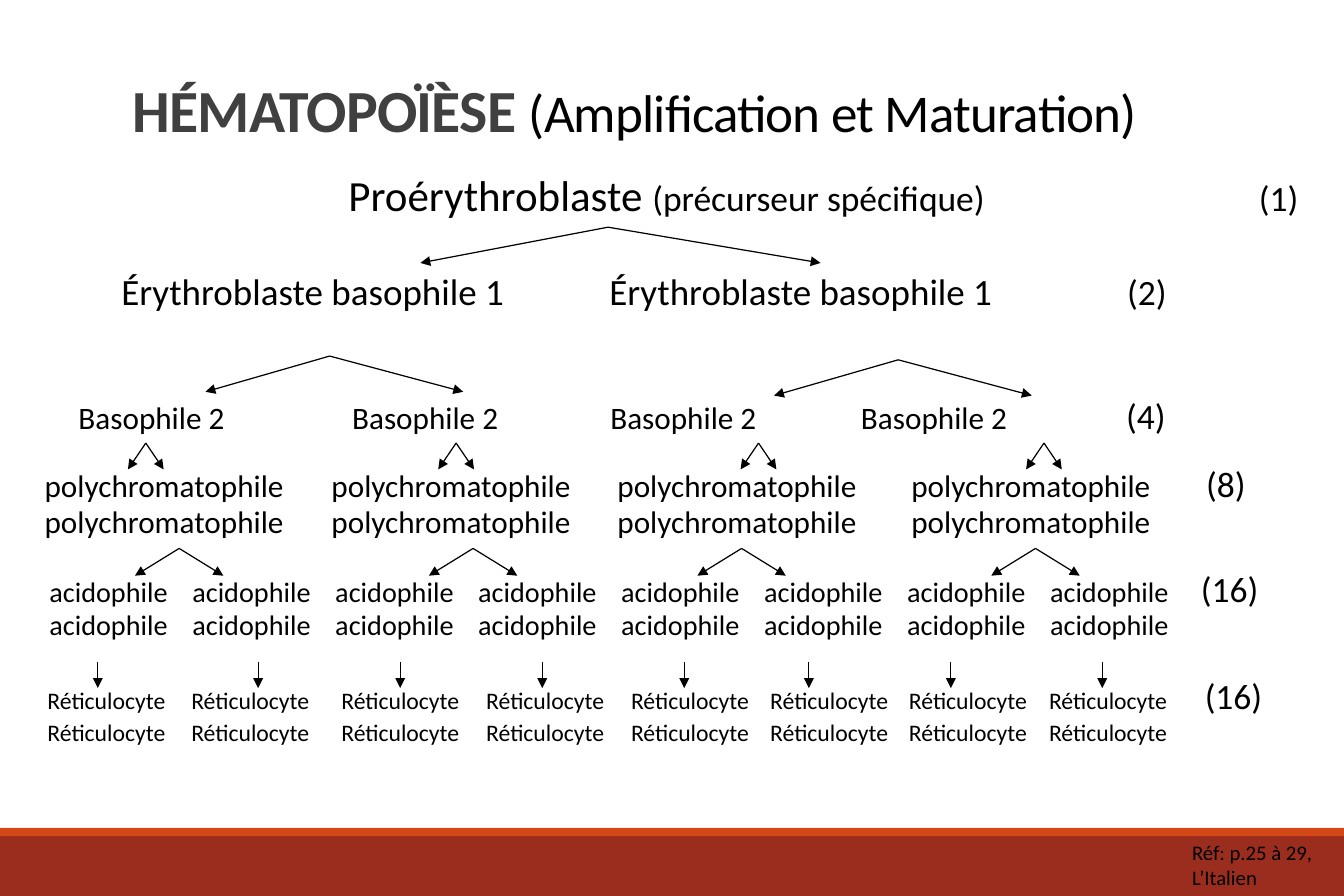
from lxml.etree import SubElement
from pptx import Presentation
from pptx.dml.color import RGBColor
from pptx.enum.shapes import MSO_CONNECTOR, MSO_SHAPE
from pptx.enum.text import MSO_ANCHOR
from pptx.oxml.ns import qn
from pptx.util import Cm, Pt

BLACK = RGBColor(0x00, 0x00, 0x00)
GREY = RGBColor(0x40, 0x40, 0x40)
BRICK = RGBColor(0x9B, 0x2D, 0x1F)
ORANGE = RGBColor(0xD3, 0x48, 0x17)
WIDTH, HEIGHT = 28.58, 19.05
LINEAGE_LEFT = 0.56
TEXT_LEFT = LINEAGE_LEFT + 0.28

POLY_STOPS = [0.98, 7.08, 13.16, 19.41, 25.68]
ACIDO_STOPS = [1.08 + 3.04 * i for i in range(8)] + [25.57]
RETI_STOPS = [1.04, 4.1, 7.29, 10.37, 13.45, 16.41, 19.36, 22.34, 25.65]


def stage(name, cells, size, count=""):
    """Runs of one generation: the tabbed cell names, then the cell count."""
    runs = [(f"\t{name}" * cells, size)]
    return runs + [(f"\t{count}", 21.4)] if count else runs


# Each generation: space before (pt), line height (pt), tab stops (cm), runs
GENERATIONS = [
    (0, 27, [7.44, 26.8], [("\tProérythroblaste ", 25.9),
                           ("(précurseur spécifique)\t(1)", 21.4)]),
    (37.7, 18, [2.61, 12.99, 24], stage("Érythroblaste basophile 1", 2, 22.3, "(2)")),
    (56.5, 18, [1.7, 7.52, 13.01, 18.34, 23.98], stage("Basophile 2", 4, 18.8, "(4)")),
    (22.9, 18, POLY_STOPS, stage("polychromatophile", 4, 18.8, "(8)")),
    (3.6, 18, POLY_STOPS, stage("polychromatophile", 4, 18.8)),
    (23.7, 18, ACIDO_STOPS, stage("acidophile", 8, 17, "(16)")),
    (1.3, 18, ACIDO_STOPS, stage("acidophile", 8, 17)),
    (27.2, 18, RETI_STOPS, stage("Réticulocyte", 8, 14.3, "(16)")),
    (0, 18, RETI_STOPS, stage("Réticulocyte", 8, 14.3)),
]

# Divisions: apex y, reach to the left, reach to the right, drop, apex xs (cm)
DIVISIONS = [
    (4.83, 3.99, 4.52, 0.76, [12.93]),
    (7.57, 2.64, 2.84, 0.76, [7.01]),
    (7.65, 2.64, 2.84, 0.76, [19.1]),
    (9.42, 0.38, 0.38, 0.56, [3.1, 9.7, 16.13, 22.2]),
    (11.66, 0.94, 0.94, 0.58, [3.81, 10.06, 15.77, 22.02]),
]
MATURATION_XS = [2.08, 5.49, 8.51, 11.53, 14.55, 17.2, 20.22, 23.44]


class LineageSlide:
    def __init__(self, slide, font="Calibri"):
        self.shapes = slide.shapes
        self.font = font

    def bar(self, top, height, color):
        bar = self.shapes.add_shape(MSO_SHAPE.RECTANGLE, 0, Cm(top), Cm(WIDTH), Cm(height))
        bar.shadow.inherit = False
        bar.fill.solid()
        bar.fill.fore_color.rgb = color
        bar.line.fill.background()

    def arrow(self, x1, y1, x2, y2):
        arrow = self.shapes.add_connector(
            MSO_CONNECTOR.STRAIGHT, Cm(x1), Cm(y1), Cm(x2), Cm(y2))
        arrow.line.color.rgb = BLACK
        arrow.line.width = Pt(0.75)
        SubElement(arrow.line._get_or_add_ln(), qn("a:tailEnd"), type="triangle")
        SubElement(arrow._element.spPr, qn("a:effectLst"))

    def fork(self, x, y, left, right, drop):
        self.arrow(x, y, x - left, y + drop)
        self.arrow(x, y, x + right, y + drop)

    def frame(self, left, top, width, height):
        """Add a wrapping text box and return its text frame."""
        frame = self.shapes.add_textbox(Cm(left), Cm(top), Cm(width), Cm(height)).text_frame
        frame.word_wrap = True
        return frame

    def run(self, paragraph, text, size, color=BLACK, bold=False):
        run = paragraph.add_run()
        run.text = text
        run.font.name = self.font
        run.font.size = Pt(size)
        run.font.color.rgb = color
        run.font.bold = bold
        return run

    def tab_stops(self, paragraph, stops):
        tabs = SubElement(paragraph._p.get_or_add_pPr(), qn("a:tabLst"))
        for stop in stops:
            SubElement(tabs, qn("a:tab"), pos=str(Cm(stop - TEXT_LEFT)), algn="l")

    def lineage(self):
        frame = self.frame(LINEAGE_LEFT, 3.61, 27.66, 13.06)
        for i, (before, height, stops, runs) in enumerate(GENERATIONS):
            generation = frame.add_paragraph() if i else frame.paragraphs[0]
            self.tab_stops(generation, stops)
            generation.line_spacing = Pt(height)
            generation.space_before = Pt(before)
            for text, size in runs:
                self.run(generation, text, size)

    def title(self):
        frame = self.frame(2.57, 0.25, 23.57, 2.95)
        frame.vertical_anchor = MSO_ANCHOR.BOTTOM
        heading = frame.paragraphs[0]
        heading.line_spacing = 0.85
        for run in (self.run(heading, "HÉMATOPOÏÈSE ", 36, GREY, True),
                    self.run(heading, "(Amplification et Maturation)", 32)):
            run.font._element.set("spc", "-50")

    def reference(self):
        frame = self.frame(25.1, 17.73, WIDTH - 25.1, 1.32)
        self.run(frame.paragraphs[0], "Réf: p.25 à 29, L’Italien", 12.5)


def main():
    deck = Presentation()
    deck.slide_width, deck.slide_height = Cm(WIDTH), Cm(HEIGHT)
    page = LineageSlide(deck.slides.add_slide(deck.slide_layouts[6]))
    page.bar(17.78, 1.27, BRICK)
    page.bar(17.6, 0.18, ORANGE)
    page.lineage()
    for y, left, right, drop, apexes in DIVISIONS:
        for x in apexes:
            page.fork(x, y, left, right, drop)
    for x in MATURATION_XS:
        page.arrow(x, 14.07, x, 14.63)
    page.reference()
    page.title()
    deck.save("out.pptx")


if __name__ == "__main__":
    main()
